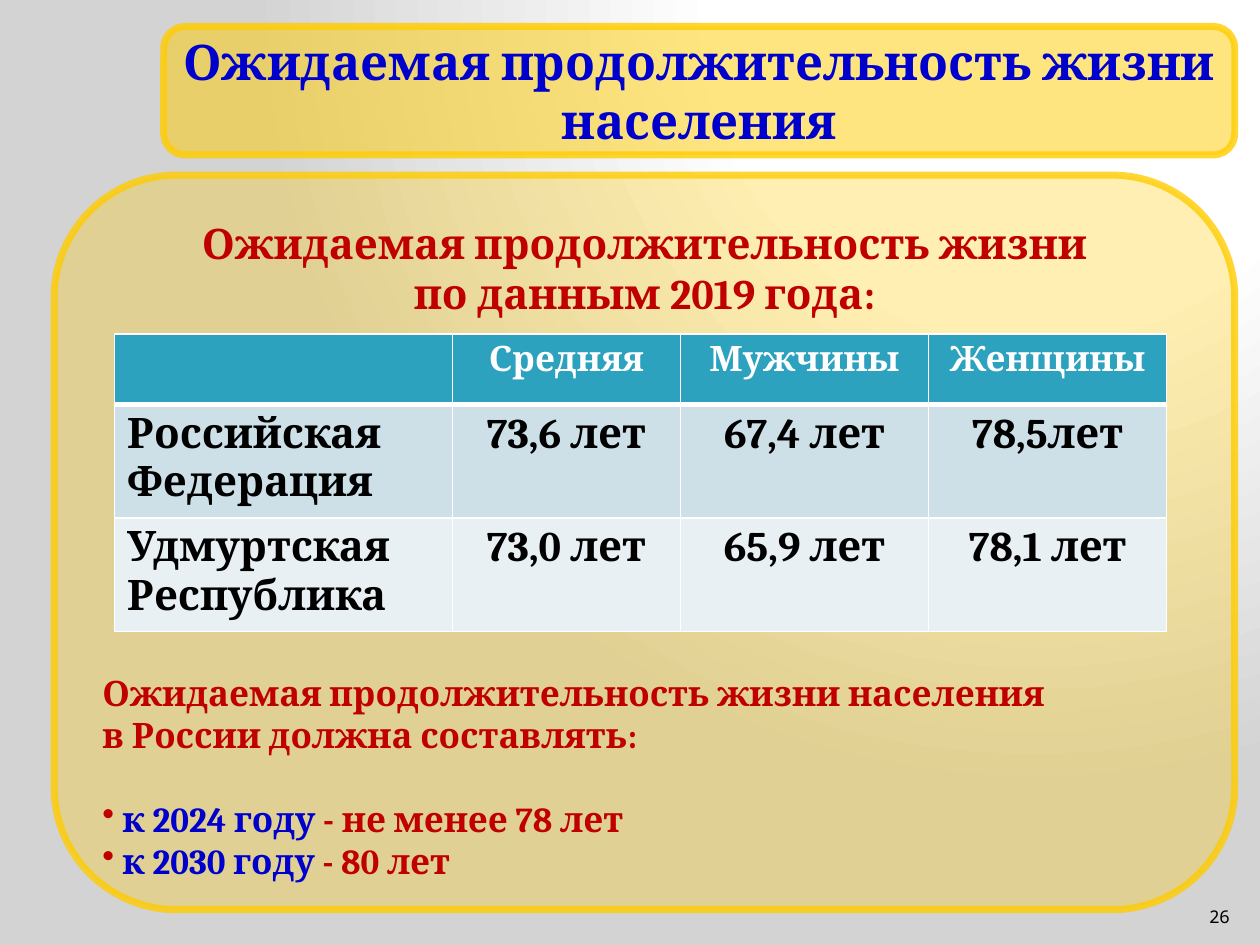
import pptx
import pptx.dml.color
import pptx.enum.shapes
import pptx.enum.text
import pptx.oxml
import pptx.oxml.ns
import pptx.util
from pptx.util import Inches

SERIF = "Cambria"
BLUE, RED, GOLD, WHITE, BLACK = "0000CC", "C00000", "FFCC00", "FFFFFF", "000000"
ALIGN = pptx.enum.text.PP_ALIGN
ANCHOR = pptx.enum.text.MSO_ANCHOR
qn = pptx.oxml.ns.qn
NAMESPACE = pptx.oxml.ns.nsdecls("a")


def rgb(color):
    return pptx.dml.color.RGBColor.from_string(color)


def add_span(para, text, size=20, color=BLACK, font=SERIF, bold=True):
    span = para.add_run()
    span.text = text
    span.font.size = pptx.util.Pt(size)
    span.font.color.rgb = rgb(color)
    span.font.name = font
    span.font.bold = bold


def add_para(frame, text="", align=ALIGN.LEFT, before=0, **style):
    """Use the empty first paragraph if there is one, else add another."""
    para = frame.paragraphs[0]
    if para.runs:
        para = frame.add_paragraph()
    para.alignment = align
    para.space_before = pptx.util.Pt(before)
    if text:
        add_span(para, text, **style)
    return para


def add_bullet(frame, parts, before=0):
    para = add_para(frame, before=before)
    properties = para._p.get_or_add_pPr()
    properties.set("marL", str(Inches(0.16)))
    properties.set("indent", str(-Inches(0.16)))
    properties.append(pptx.oxml.parse_xml(
        f'<a:buClr {NAMESPACE}><a:srgbClr val="{RED}"/></a:buClr>'))
    properties.append(pptx.oxml.parse_xml(f'<a:buChar {NAMESPACE} char="•"/>'))
    for text, color in parts:
        add_span(para, text, color=color)


def set_opacity(fill, percent):
    color = fill._xPr.find(qn("a:solidFill"))[0]
    color.append(pptx.oxml.parse_xml(f'<a:alpha {NAMESPACE} val="{percent * 1000}"/>'))


def add_panel(page, left, top, width, height, opacity, anchor):
    """Add a translucent gold rounded panel and return its text frame."""
    panel = page.shapes.add_shape(
        pptx.enum.shapes.MSO_SHAPE.ROUNDED_RECTANGLE,
        Inches(left), Inches(top), Inches(width), Inches(height))
    panel.shadow.inherit = False
    panel.line.width = pptx.util.Pt(4)
    for fill, percent in ((panel.fill, opacity), (panel.line.fill, 80)):
        fill.solid()
        fill.fore_color.rgb = rgb(GOLD)
        set_opacity(fill, percent)
    panel.text_frame.word_wrap = True
    panel.text_frame.vertical_anchor = anchor
    return panel.text_frame


def set_background(page):
    page.background.fill.gradient()
    gradient = next(page.element.iter(qn("a:gradFill")))
    stops = "".join(
        f'<a:gs pos="{position * 1000}"><a:srgbClr val="{color}"/></a:gs>'
        for position, color in ((0, WHITE), (40, WHITE), (100, "D3D3D3")))
    gradient.getparent().replace(gradient, pptx.oxml.parse_xml(
        f'<a:gradFill {NAMESPACE} rotWithShape="1"><a:gsLst>{stops}</a:gsLst>'
        '<a:path path="circle"><a:fillToRect l="65000" b="98000"/></a:path>'
        '</a:gradFill>'))


def set_borders(cell, **widths):
    """Draw white borders; widths in points by side: L, R, T, B."""
    properties = cell._tc.get_or_add_tcPr()
    for side in "LRTB":
        width = pptx.util.Pt(widths.get(side, 1))
        properties.append(pptx.oxml.parse_xml(
            f'<a:ln{side} {NAMESPACE} w="{width}"><a:solidFill>'
            f'<a:srgbClr val="{WHITE}"/></a:solidFill></a:ln{side}>'))


def add_life_table(page):
    rows = (
        ("", "Средняя", "Мужчины", "Женщины"),
        ("Российская Федерация", "73,6 лет", "67,4 лет", "78,5лет"),
        ("Удмуртская Республика", "73,0 лет", "65,9 лет", "78,1 лет"),
    )
    fills = ("2DA2BF", "CDE0E8", "E8F0F4")
    borders = ({"B": 3}, {"T": 3}, {})
    table = page.shapes.add_table(
        len(rows), len(rows[0]),
        Inches(0.91), Inches(2.65), Inches(8.35), Inches(2.3)).table
    for column, width in zip(table.columns, (2.68, 1.81, 1.97, 1.89)):
        column.width = Inches(width)
    for row, height in zip(table.rows, (0.56, 0.87, 0.87)):
        row.height = Inches(height)
    for r, texts in enumerate(rows):
        size, color = (24, BLACK) if r else (20, WHITE)
        for c, text in enumerate(texts):
            cell = table.cell(r, c)
            set_borders(cell, **borders[r])
            cell.fill.solid()
            cell.fill.fore_color.rgb = rgb(fills[r])
            add_para(cell.text_frame, text, ALIGN.CENTER if c else ALIGN.LEFT,
                     size=size, color=color)


def add_page_number(page):
    box = page.shapes.add_textbox(Inches(9.46), Inches(7.01), Inches(0.4), Inches(0.4))
    box.text_frame.word_wrap = True
    box.text_frame.vertical_anchor = ANCHOR.BOTTOM
    add_para(box.text_frame, "26", ALIGN.RIGHT, size=10, font="Noto Sans Mono", bold=False)


def main():
    deck = pptx.Presentation()
    deck.slide_width, deck.slide_height = Inches(10), Inches(7.5)
    page = deck.slides.add_slide(deck.slide_layouts[6])
    set_background(page)

    title = add_panel(page, 1.3, 0.21, 8.5, 1.02, 50, ANCHOR.MIDDLE)
    add_para(title, "Ожидаемая продолжительность жизни населения",
             ALIGN.CENTER, size=28, color=BLUE)

    body = add_panel(page, 0.43, 1.39, 9.37, 5.83, 30, ANCHOR.TOP)
    for text in ("Ожидаемая продолжительность жизни", "по данным 2019 года:"):
        add_para(body, text, ALIGN.CENTER, size=24, color=RED)
    add_para(body, "Ожидаемая продолжительность жизни населения",
             ALIGN.JUSTIFY, before=202, color=RED)
    add_para(body, "в России должна составлять:", ALIGN.JUSTIFY, color=RED)
    add_bullet(body, (("к 2024 году ", BLUE), ("- не менее 78 лет", RED)), before=24)
    add_bullet(body, (("к 2030 году ", BLUE), ("- 80 лет", RED)))

    add_page_number(page)
    add_life_table(page)
    deck.save("out.pptx")


if __name__ == "__main__":
    main()
